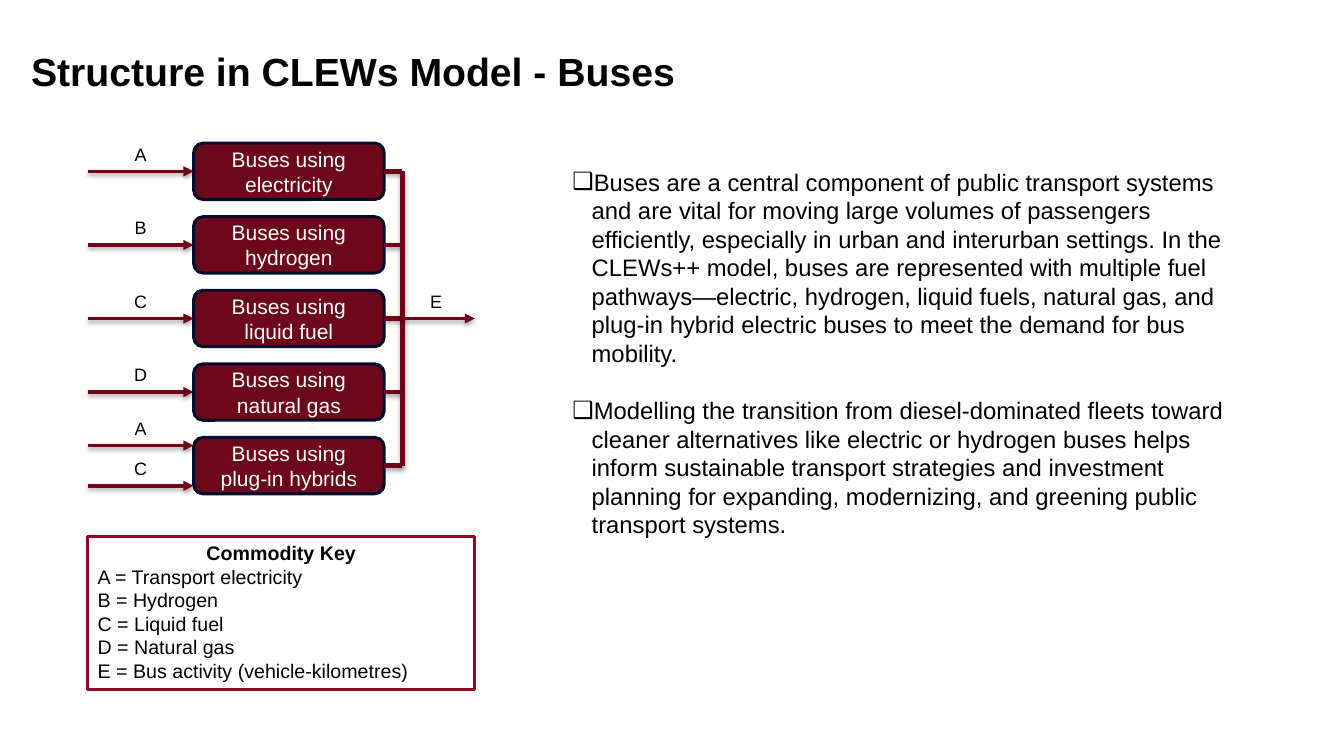
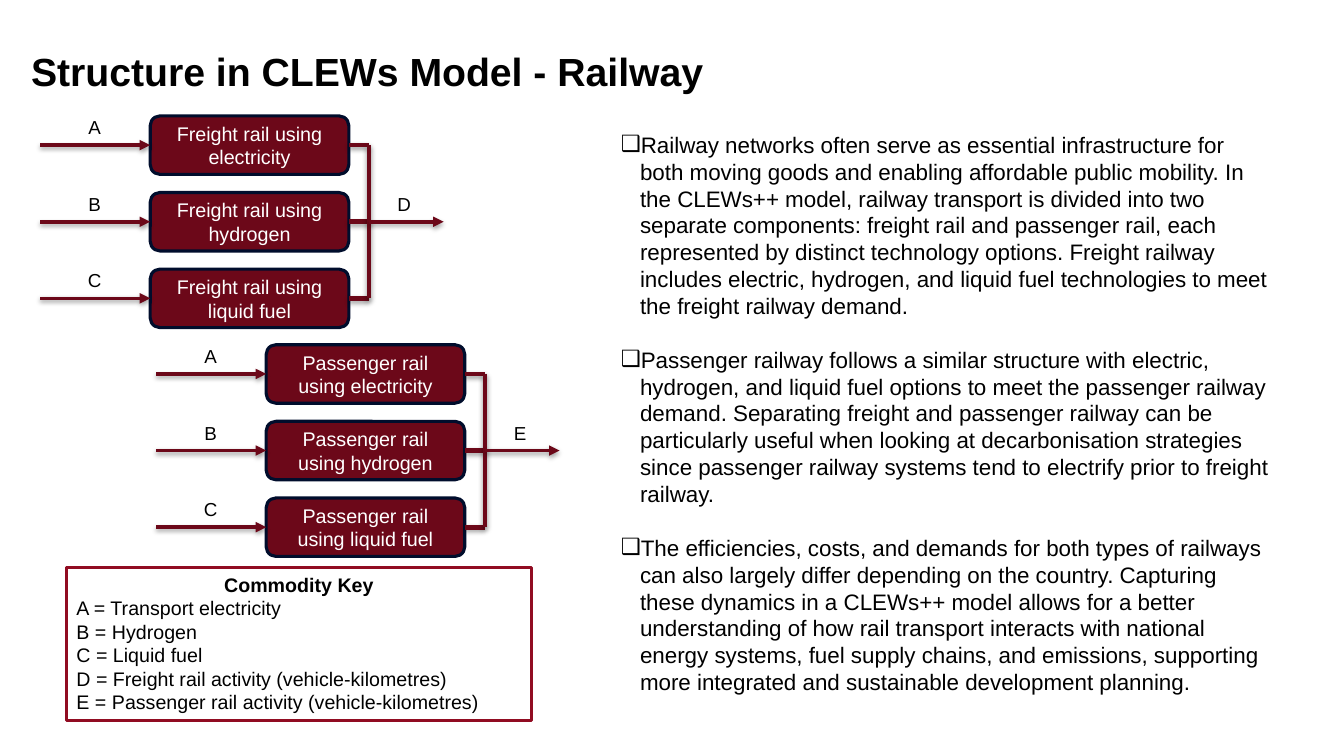
"""Build two slides on the structure of the CLEWs model."""
import dataclasses

import pptx
import pptx.dml.color
import pptx.enum.shapes
import pptx.enum.text
import pptx.oxml
import pptx.oxml.ns
import pptx.util

PX = 9144
FONT = "Arial"
BLACK, WHITE = "000000", "FFFFFF"
WINE, NAVY, RED = "6C0819", "000D2C", "910C22"
ALIGN = pptx.enum.text.PP_ALIGN
ANCHOR = pptx.enum.text.MSO_ANCHOR
SHAPE = pptx.enum.shapes.MSO_SHAPE
STRAIGHT = pptx.enum.shapes.MSO_CONNECTOR.STRAIGHT
FUELS = ["A = Transport electricity", "B = Hydrogen", "C = Liquid fuel"]


@dataclasses.dataclass
class Size:
    """Hold the measures of one kind of flow chart."""

    width: int
    height: int
    step: int
    lead: int
    gap: int
    out: int
    tag_w: int
    tag_h: int
    pad: int
    font: float
    tag_font: float
    edge: float
    thin: float
    thick: float
    blur: float
    drop: float


BUS = Size(189, 56, 73, 105, 18, 72, 77, 32, 5, 15, 12.8, 2.14, 2.41, 3.21, 3.4, 1.7)
RAIL = Size(197, 58, 76, 109, 20, 74, 80, 34, 6, 14.1, 13.4, 2.23, 2.5, 3.35, 3.5, 1.8)


def px(*nums):
    """Turn px into EMU."""
    return [pptx.util.Emu(num * PX) for num in nums]


def tint(hue):
    """Turn a hex string into a colour."""
    return pptx.dml.color.RGBColor.from_string(hue)


def add_xml(node, tag, inner="", **attrs):
    """Append a drawing element to a node."""
    text = "".join(f' {name}="{val}"' for name, val in attrs.items())
    space = pptx.oxml.ns.nsdecls("a")
    node.append(pptx.oxml.parse_xml(f"<a:{tag} {space}{text}>{inner}</a:{tag}>"))


def style(para, size, hue=BLACK, bold=False):
    """Set the font of each run in a paragraph."""
    for run in para.runs:
        font = run.font
        font.name, font.size, font.bold = FONT, pptx.util.Pt(size), bold
        font.color.rgb = tint(hue)


def write(shape, text, size, hue=BLACK, bold=False, align=ALIGN.LEFT,
          anchor=ANCHOR.TOP, pad=(10, 5)):
    """Put text in a shape and return its paragraphs."""
    frame = shape.text_frame
    frame.text = text
    frame.word_wrap = True
    frame.vertical_anchor = anchor
    frame.margin_left, frame.margin_top = px(*pad)
    frame.margin_right, frame.margin_bottom = px(*pad)
    for para in frame.paragraphs:
        para.alignment = align
        style(para, size, hue, bold)
    return frame.paragraphs


def add_title(slide, text):
    """Add the slide title."""
    box = slide.shapes.add_textbox(*px(21, -22, 1270, 121))
    paras = write(box, text, 28, bold=True, anchor=ANCHOR.BOTTOM)
    paras[0].line_spacing = 0.9


def add_notes(slide, rect, size, texts):
    """Add the bulleted text at the right."""
    box = slide.shapes.add_textbox(*px(*rect))
    for num, para in enumerate(write(box, "\n".join(texts), size)):
        if num:
            para.space_before = pptx.util.Pt(round(size * 1.2, 1))
        props = para._p.get_or_add_pPr()
        props.set("marL", str(19 * PX))
        props.set("indent", str(-22 * PX))
        add_xml(props, "buClr", f'<a:srgbClr val="{BLACK}"/>')
        add_xml(props, "buFont", typeface=FONT)
        add_xml(props, "buChar", char="❑")


def add_block(slide, kind, rect, hue, width, fill=None):
    """Add an outlined shape."""
    block = slide.shapes.add_shape(kind, *px(*rect))
    block.shadow.inherit = False
    block.line.color.rgb = tint(hue)
    block.line.width = pptx.util.Pt(width)
    if fill:
        block.fill.solid()
        block.fill.fore_color.rgb = tint(fill)
    else:
        block.fill.background()
    return block


def add_key(slide, rect, lines):
    """Add the framed commodity key."""
    block = add_block(slide, SHAPE.RECTANGLE, rect, RED, 2.25)
    paras = write(block, "\n".join(["Commodity Key"] + lines), 14)
    paras[0].alignment = ALIGN.CENTER
    style(paras[0], 14, bold=True)


def add_line(slide, size, ends, width, head=False):
    """Add a straight line with a soft shadow."""
    line = slide.shapes.add_connector(STRAIGHT, *px(*ends))
    line.line.color.rgb = tint(WINE)
    line.line.width = pptx.util.Pt(width)
    if head:
        add_xml(line.get_or_add_ln(), "tailEnd", type="triangle")
    blur, drop = (int(pptx.util.Pt(num)) for num in (size.blur, size.drop))
    shade = (f'<a:outerShdw blurRad="{blur}" dist="{drop}" dir="5400000" '
             f'rotWithShape="0"><a:srgbClr val="{BLACK}"><a:alpha val="37000"/>'
             "</a:srgbClr></a:outerShdw>")
    add_xml(line._element.spPr, "effectLst", shade)
    return line


def add_flow(slide, size, left, right, y, tag, shift):
    """Add an arrow with its letter above."""
    rect = (left + shift, y - size.tag_h - 1, size.tag_w, size.tag_h)
    box = slide.shapes.add_textbox(*px(*rect))
    write(box, tag, size.tag_font, align=ALIGN.CENTER, pad=(11, size.pad))
    return add_line(slide, size, (left, y, right, y), size.thin, head=True)


def add_chart(slide, size, left, top, items, tag):
    """Add a stack of boxes whose outputs join in one arrow."""
    side = left + size.width
    spine = side + size.gap
    mids = [top + size.height // 2 + num * size.step for num in range(len(items))]
    for mid, (name, fuels) in zip(mids, items):
        rect = (left, mid - size.height // 2, size.width, size.height)
        block = add_block(slide, SHAPE.ROUNDED_RECTANGLE, rect, NAVY, size.edge, WINE)
        write(block, name, size.font, WHITE, align=ALIGN.CENTER,
              anchor=ANCHOR.MIDDLE, pad=(11, size.pad))
        for num, fuel in enumerate(fuels):
            y = mid + 40 * num - 20 * (len(fuels) - 1)
            flow = add_flow(slide, size, left - size.lead, left, y, fuel, 14)
            if y == mid:
                flow.end_connect(block, 1)
        stub = add_line(slide, size, (spine, mid, side, mid), size.thick)
        stub.end_connect(block, 3)
    add_line(slide, size, (spine, mids[0], spine, mids[-1]), size.thick)
    mid = mids[len(mids) // 2]
    add_flow(slide, size, spine, spine + size.out, mid, tag, -5)


def add_buses(slide):
    """Fill the slide on buses."""
    add_title(slide, "Structure in CLEWs Model - Buses")
    add_notes(slide, (558, 161, 680, 382), 17, [
        "Buses are a central component of public transport systems and are vital "
        "for moving large volumes of passengers efficiently, especially in urban "
        "and interurban settings. In the CLEWs++ model, buses are represented "
        "with multiple fuel pathways—electric, hydrogen, liquid fuels, natural "
        "gas, and plug-in hybrid electric buses to meet the demand for bus "
        "mobility.",
        "Modelling the transition from diesel-dominated fleets toward cleaner "
        "alternatives like electric or hydrogen buses helps inform sustainable "
        "transport strategies and investment planning for expanding, "
        "modernizing, and greening public transport systems.",
    ])
    kinds = {"electricity": "A", "hydrogen": "B", "liquid fuel": "C",
             "natural gas": "D", "plug-in hybrids": "AC"}
    items = [(f"Buses using {kind}", fuels) for kind, fuels in kinds.items()]
    add_chart(slide, BUS, 192, 142, items, "E")
    add_key(slide, (87, 532, 384, 152), FUELS + [
        "D = Natural gas", "E = Bus activity (vehicle-kilometres)"])


def add_rail(slide):
    """Fill the slide on railways."""
    add_title(slide, "Structure in CLEWs Model - Railway")
    add_notes(slide, (606, 125, 663, 576), 16, [
        "Railway networks often serve as essential infrastructure for both "
        "moving goods and enabling affordable public mobility. In the CLEWs++ "
        "model, railway transport is divided into two separate components: "
        "freight rail and passenger rail, each represented by distinct "
        "technology options. Freight railway includes electric, hydrogen, and "
        "liquid fuel technologies to meet the freight railway demand.",
        "Passenger railway follows a similar structure with electric, hydrogen, "
        "and liquid fuel options to meet the passenger railway demand. "
        "Separating freight and passenger railway can be particularly useful "
        "when looking at decarbonisation strategies since passenger railway "
        "systems tend to electrify prior to freight railway.",
        "The efficiencies, costs, and demands for both types of railways can "
        "also largely differ depending on the country. Capturing these dynamics "
        "in a CLEWs++ model allows for a better understanding of how rail "
        "transport interacts with national energy systems, fuel supply chains, "
        "and emissions, supporting more integrated and sustainable development "
        "planning.",
    ])
    kinds = {"electricity": "A", "hydrogen": "B", "liquid fuel": "C"}
    for use, left, top, tag in (("Freight", 149, 115, "D"),
                                ("Passenger", 264, 342, "E")):
        items = [(f"{use} rail using {kind}", fuel) for kind, fuel in kinds.items()]
        add_chart(slide, RAIL, left, top, items, tag)
    add_key(slide, (66, 563, 461, 152), FUELS + [
        "D = Freight rail activity (vehicle-kilometres)",
        "E = Passenger rail activity (vehicle-kilometres)"])


def main():
    """Build and save the slides."""
    deck = pptx.Presentation()
    deck.slide_width, deck.slide_height = px(1333, 750)
    for fill in (add_buses, add_rail):
        fill(deck.slides.add_slide(deck.slide_layouts[6]))
    deck.save("out.pptx")


if __name__ == "__main__":
    main()
